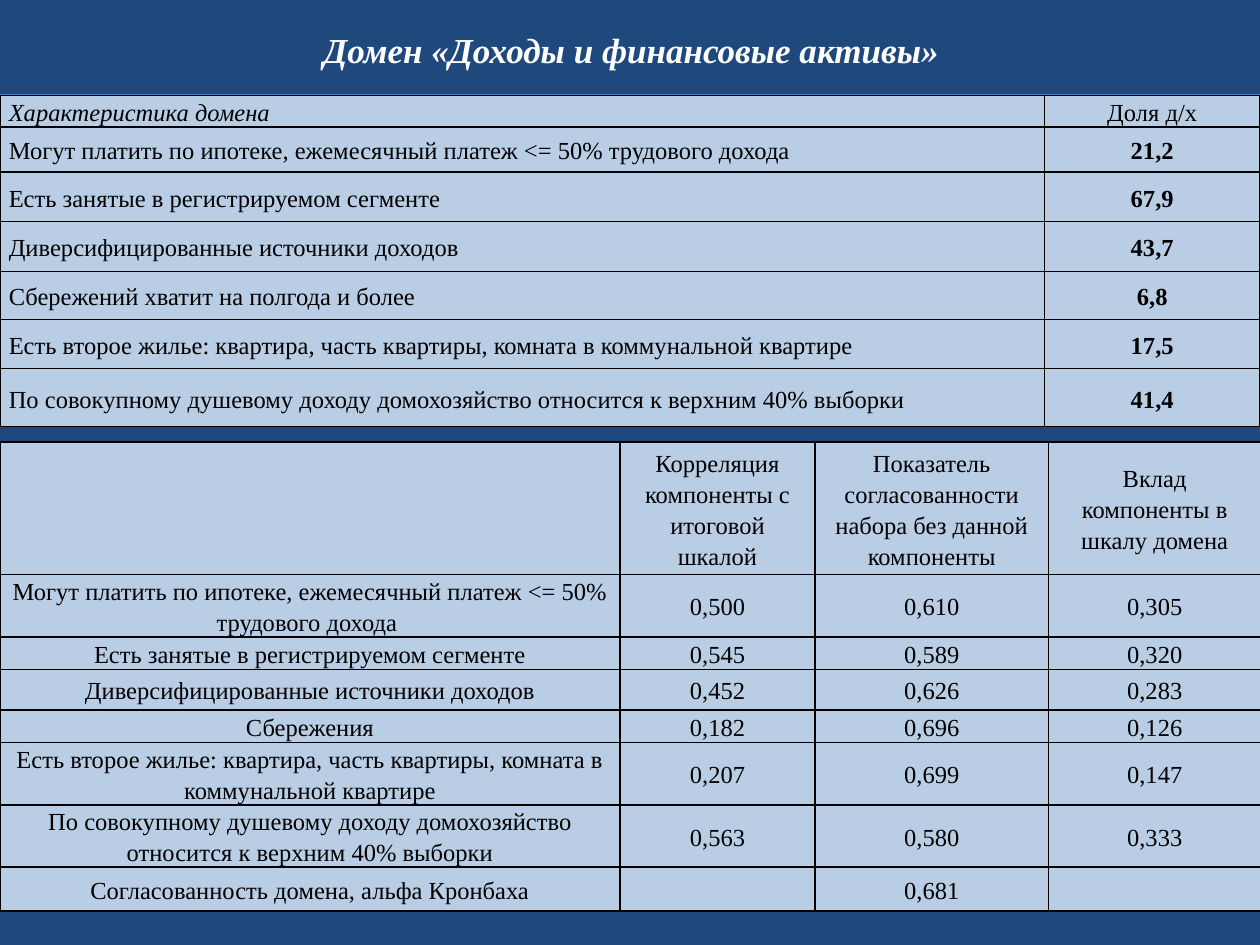
from lxml.etree import SubElement
from pptx import Presentation
from pptx.dml.color import RGBColor
from pptx.enum.shapes import MSO_CONNECTOR as Connector
from pptx.enum.text import MSO_ANCHOR as Anchor, PP_ALIGN as Align
from pptx.oxml.ns import qn
from pptx.util import Inches, Pt

COLORS = {"back": "1F497D", "cell": "B9CDE5", "rule": "4B7EBC", "text": "000000", "title": "FFFFFF"}
FONT = "Times New Roman"
TITLE = "Домен «Доходы и финансовые активы»"

MORTGAGE = "Могут платить по ипотеке, ежемесячный платеж <= 50% трудового дохода "
EMPLOYED = "Есть занятые в регистрируемом сегменте"
DIVERSE = "Диверсифицированные источники доходов"
HOUSING = "Есть второе жилье: квартира, часть квартиры, комната в коммунальной квартире"
INCOME = "По совокупному душевому доходу домохозяйство относится к верхним 40% выборки"

SHARES = {
    "top": 0.76,
    "columns": [8.29, 1.71],
    "heights": [0.24, 0.36, 0.39, 0.4, 0.38, 0.39, 0.46],
    "rows": [
        ("Характеристика домена ", "Доля д/х"),
        (MORTGAGE, "21,2"),
        (EMPLOYED, "67,9"),
        (DIVERSE, "43,7"),
        ("Сбережений хватит на полгода и более", "6,8"),
        (HOUSING, "17,5"),
        (INCOME, "41,4"),
    ],
}
CONSISTENCY = {
    "top": 3.51,
    "columns": [4.92, 1.55, 1.85, 1.69],
    "heights": [1.05, 0.49, 0.26, 0.32, 0.26, 0.49, 0.49, 0.35],
    "rows": [
        ("", "Корреляция компоненты с итоговой шкалой",
         "Показатель согласованности набора без данной компоненты",
         "Вклад компоненты в шкалу домена"),
        (MORTGAGE, "0,500", "0,610", "0,305"),
        (EMPLOYED, "0,545", "0,589", "0,320"),
        (DIVERSE, "0,452", "0,626", "0,283"),
        ("Сбережения", "0,182", "0,696", "0,126"),
        (HOUSING, "0,207", "0,699", "0,147"),
        (INCOME, "0,563", "0,580", "0,333"),
        ("Согласованность домена, альфа Кронбаха", "", "0,681", ""),
    ],
}


def color(name):
    return RGBColor.from_string(COLORS[name])


def set_all(target, values):
    for name, value in values.items():
        setattr(target, name, value)


def write(para, text, size, tone, align, **style):
    para.alignment = align
    span = para.add_run()
    span.text = text
    set_all(span.font, {"name": FONT, "size": Pt(size), **style})
    span.font.color.rgb = color(tone)


def add_borders(cell):
    props = cell._tc.get_or_add_tcPr()
    for side in ("a:lnL", "a:lnR", "a:lnT", "a:lnB"):
        line = SubElement(props, qn(side), w=str(Pt(1)))
        fill = SubElement(line, qn("a:solidFill"))
        SubElement(fill, qn("a:srgbClr"), val=COLORS["text"])


def share_style(row, column):
    if row == 0:
        return (Align.CENTER, {}) if column else (Align.LEFT, {"italic": True})
    return (Align.CENTER, {"bold": True}) if column else (Align.JUSTIFY, {})


def centered_style(row, column):
    return Align.CENTER, {}


def add_grid(page, data, style_of):
    rows, columns, heights = data["rows"], data["columns"], data["heights"]
    frame = page.shapes.add_table(len(rows), len(columns), 0, Inches(data["top"]),
                                  Inches(10), Inches(sum(heights)))
    table = frame.table
    set_all(table, {"first_row": False, "horz_banding": False})
    for column, width in zip(table.columns, columns):
        column.width = Inches(width)
    for row, height in zip(table.rows, heights):
        row.height = Inches(height)
    for r, texts in enumerate(rows):
        for c, text in enumerate(texts):
            cell = table.cell(r, c)
            set_all(cell, {"margin_left": Inches(0.07), "margin_right": Inches(0.07),
                           "margin_top": 0, "margin_bottom": 0,
                           "vertical_anchor": Anchor.MIDDLE})
            add_borders(cell)
            cell.fill.solid()
            cell.fill.fore_color.rgb = color("cell")
            if text:
                align, style = style_of(r, c)
                para = cell.text_frame.paragraphs[0]
                para.line_spacing = 1.15
                write(para, text, 14, "text", align, **style)


def main():
    deck = Presentation()
    set_all(deck, {"slide_width": Inches(10), "slide_height": Inches(7.5)})
    page = deck.slides.add_slide(deck.slide_layouts[5])
    page.background.fill.solid()
    page.background.fill.fore_color.rgb = color("back")

    title = page.shapes.title
    set_all(title, {"left": Inches(0.51), "top": Inches(-0.19),
                    "width": Inches(9), "height": Inches(1.17)})
    title.text_frame.vertical_anchor = Anchor.MIDDLE
    write(title.text_frame.paragraphs[0], TITLE, 20, "title", Align.CENTER, bold=True, italic=True)

    rule = page.shapes.add_connector(Connector.STRAIGHT, 0, Inches(0.76), Inches(10), Inches(0.76))
    rule.line.width = Pt(2.5)
    rule.line.color.rgb = color("rule")
    SubElement(rule._element.spPr, qn("a:effectLst"))

    add_grid(page, SHARES, share_style)
    add_grid(page, CONSISTENCY, centered_style)
    deck.save("out.pptx")


if __name__ == "__main__":
    main()
